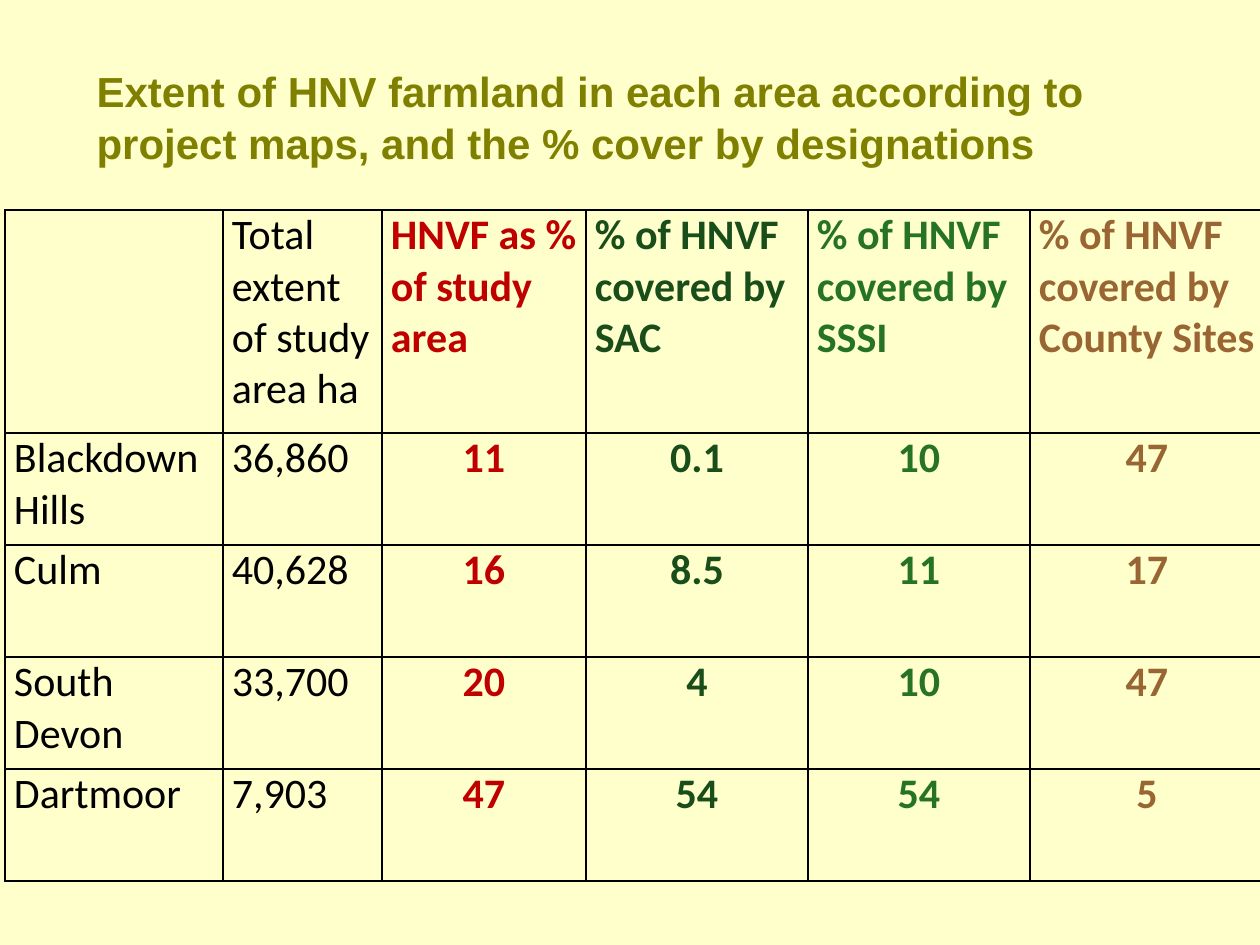
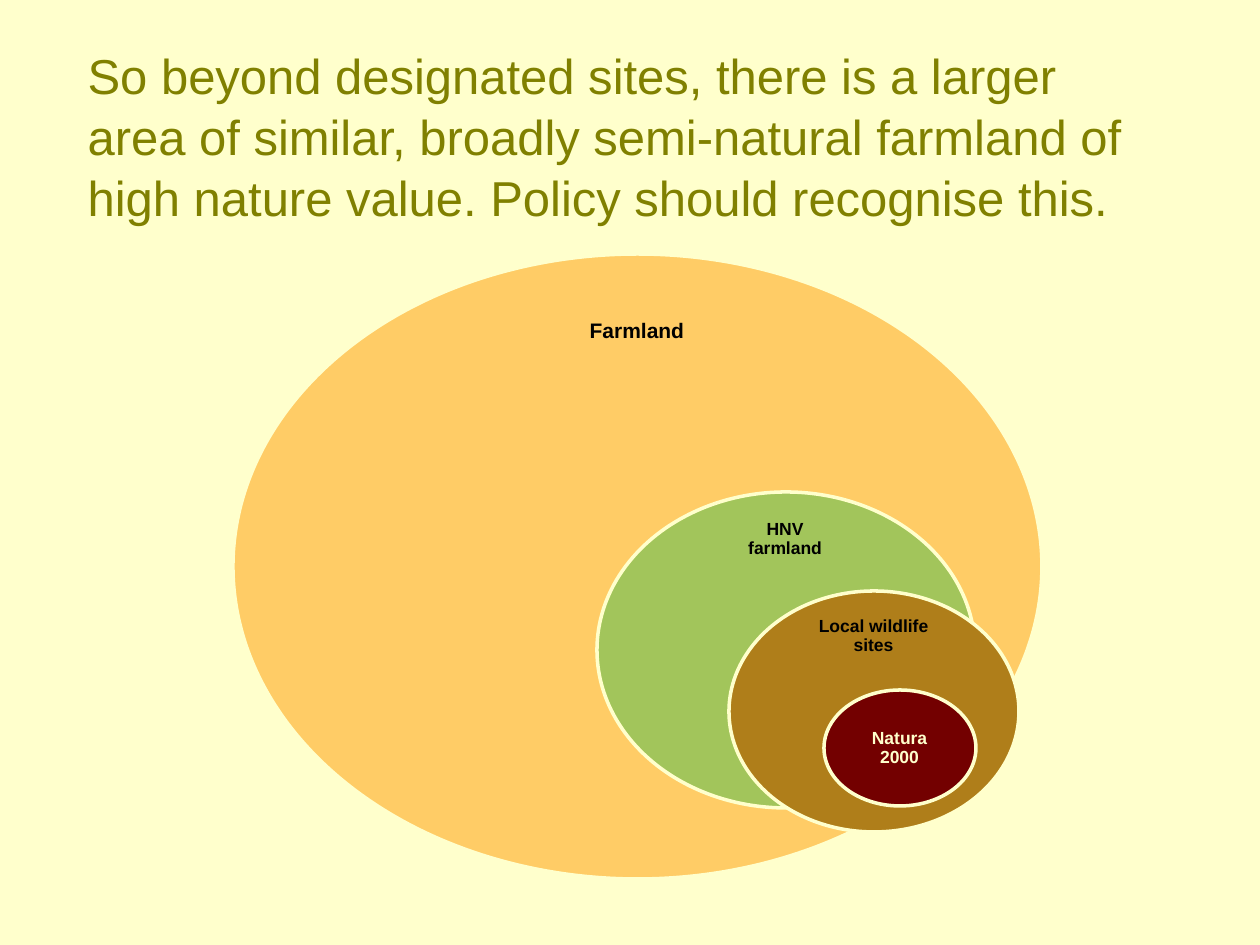
from dataclasses import dataclass

from lxml.etree import SubElement
from pptx import Presentation
from pptx.dml.color import RGBColor
from pptx.enum.shapes import MSO_SHAPE
from pptx.enum.text import MSO_ANCHOR, MSO_AUTO_SIZE, PP_ALIGN
from pptx.oxml.ns import qn
from pptx.util import Emu, Pt

EMU_PER_INCH = 914400
PX_PER_INCH = 126
COLOURS = {
    "cream": "FFFFCC",
    "olive": "808000",
    "black": "000000",
    "red": "C00000",
    "dark green": "194D19",
    "green": "267326",
    "brown": "996633",
    "orange": "FFCC66",
    "lime": "A2C55B",
    "ochre": "AF7E1A",
    "maroon": "730000",
}


@dataclass(frozen=True)
class Area:
    left: int
    top: int
    width: int
    height: int

    def emu(self):
        return [px(side) for side in (self.left, self.top, self.width, self.height)]


@dataclass(frozen=True)
class Column:
    heading: str
    values: tuple
    width: int
    colour: str = "black"
    key_figure: bool = True


@dataclass(frozen=True)
class Zone:
    name: str
    ellipse: Area
    label: Area
    fill: str
    size: int = 10
    inset: int = 10
    text_colour: str = "black"


COLUMNS = (
    Column("", ("Blackdown Hills", "Culm", "South Devon", "Dartmoor"), 218, key_figure=False),
    Column("Total extent of study area ha", ("36,860", "40,628", "33,700", "7,903"), 159,
           key_figure=False),
    Column("HNVF as % of study area", ("11", "16", "20", "47"), 204, "red"),
    Column("% of HNVF covered by SAC", ("0.1", "8.5", "4", "54"), 222, "dark green"),
    Column("% of HNVF covered by SSSI", ("10", "11", "10", "54"), 222, "green"),
    Column("% of HNVF covered by County Sites", ("47", "17", "47", "5"), 234, "brown"),
)
TABLE_LEFT, TABLE_TOP = 5, 210
HEADING_HEIGHT, ROW_HEIGHT = 223, 112
CELL_MARGIN = 9

ZONES = (
    Zone("Farmland", Area(233, 254, 809, 625), Area(524, 285, 226, 93), "orange", 12, 11),
    Zone("HNV farmland", Area(597, 492, 378, 316), Area(719, 511, 132, 57), "lime"),
    Zone("Local wildlife sites", Area(729, 591, 290, 241), Area(806, 609, 135, 54), "ochre"),
    Zone("Natura 2000", Area(824, 690, 152, 116), Area(846, 719, 107, 58), "maroon",
         text_colour="cream"),
)


def px(length: int) -> Emu:
    return Emu(length * EMU_PER_INCH // PX_PER_INCH)


def colour_of(name: str) -> RGBColor:
    return RGBColor.from_string(COLOURS[name])


def style_text(frame, font_name: str, size: int, colour: str, bold: bool, align) -> None:
    for para in frame.paragraphs:
        para.alignment = align
        for span in para.runs:
            span.font.name = font_name
            span.font.size = Pt(size)
            span.font.bold = bold
            span.font.color.rgb = colour_of(colour)


def set_margins(frame, horizontal: int, vertical: int) -> None:
    frame.margin_left = frame.margin_right = px(horizontal)
    frame.margin_top = frame.margin_bottom = px(vertical)


def add_page(deck, heading: str, area: Area, size: int, bold: bool):
    page = deck.slides.add_slide(deck.slide_layouts[5])
    title = page.shapes.title
    title.left, title.top, title.width, title.height = area.emu()
    frame = title.text_frame
    frame.text = heading
    frame.word_wrap = True
    frame.auto_size = MSO_AUTO_SIZE.NONE
    frame.vertical_anchor = MSO_ANCHOR.MIDDLE
    frame.paragraphs[0].line_spacing = 1.04
    style_text(frame, "Arial", size, "olive", bold, PP_ALIGN.LEFT)
    return page


def outline_cell(cell) -> None:
    properties = cell._tc.get_or_add_tcPr()
    for edge in ("lnL", "lnR", "lnT", "lnB"):
        line = SubElement(properties, qn(f"a:{edge}"), w=str(Pt(1)))
        fill = SubElement(line, qn("a:solidFill"))
        SubElement(fill, qn("a:srgbClr"), val=COLOURS["black"])


def fill_cell(cell, text: str, column: Column, align) -> None:
    outline_cell(cell)
    cell.fill.background()
    cell.margin_left = cell.margin_right = px(CELL_MARGIN)
    cell.margin_top = cell.margin_bottom = 0
    cell.text_frame.text = text
    style_text(cell.text_frame, "Calibri", 24, column.colour, column.key_figure, align)


def add_extent_table(page) -> None:
    value_count = len(COLUMNS[0].values)
    area = Area(TABLE_LEFT, TABLE_TOP, sum(column.width for column in COLUMNS),
                HEADING_HEIGHT + value_count * ROW_HEIGHT)
    table = page.shapes.add_table(value_count + 1, len(COLUMNS), *area.emu()).table
    table.first_row = table.horz_banding = False
    for row_index, row in enumerate(table.rows):
        row.height = px(ROW_HEIGHT if row_index else HEADING_HEIGHT)
    for column_index, column in enumerate(COLUMNS):
        table.columns[column_index].width = px(column.width)
        for row_index, text in enumerate((column.heading, *column.values)):
            centred = row_index > 0 and column.key_figure
            align = PP_ALIGN.CENTER if centred else PP_ALIGN.LEFT
            fill_cell(table.cell(row_index, column_index), text, column, align)


def add_zone(page, zone: Zone) -> None:
    ellipse = page.shapes.add_shape(MSO_SHAPE.OVAL, *zone.ellipse.emu())
    ellipse.shadow.inherit = False
    ellipse.fill.solid()
    ellipse.fill.fore_color.rgb = colour_of(zone.fill)
    ellipse.line.color.rgb = colour_of("cream")
    ellipse.line.width = Pt(2)
    frame = page.shapes.add_textbox(*zone.label.emu()).text_frame
    frame.text = zone.name
    frame.word_wrap = True
    frame.vertical_anchor = MSO_ANCHOR.MIDDLE
    frame.paragraphs[0].line_spacing = 0.9
    set_margins(frame, zone.inset, zone.inset)
    style_text(frame, "Arial", zone.size, zone.text_colour, True, PP_ALIGN.CENTER)


def main() -> None:
    deck = Presentation()
    deck.slide_width, deck.slide_height = px(1260), px(945)
    background = deck.slide_master.background.fill
    background.solid()
    background.fore_color.rgb = colour_of("cream")

    extent_page = add_page(
        deck,
        "Extent of HNV farmland in each area according to project maps, "
        "and the % cover by designations",
        Area(84, 37, 1111, 157), 24, True)
    add_extent_table(extent_page)

    policy_page = add_page(
        deck,
        "So beyond designated sites, there is a larger area of similar, broadly "
        "semi-natural farmland of high nature value. Policy should recognise this.",
        Area(75, 27, 1091, 215), 28, False)
    for zone in ZONES:
        add_zone(policy_page, zone)

    deck.save("out.pptx")


if __name__ == "__main__":
    main()
